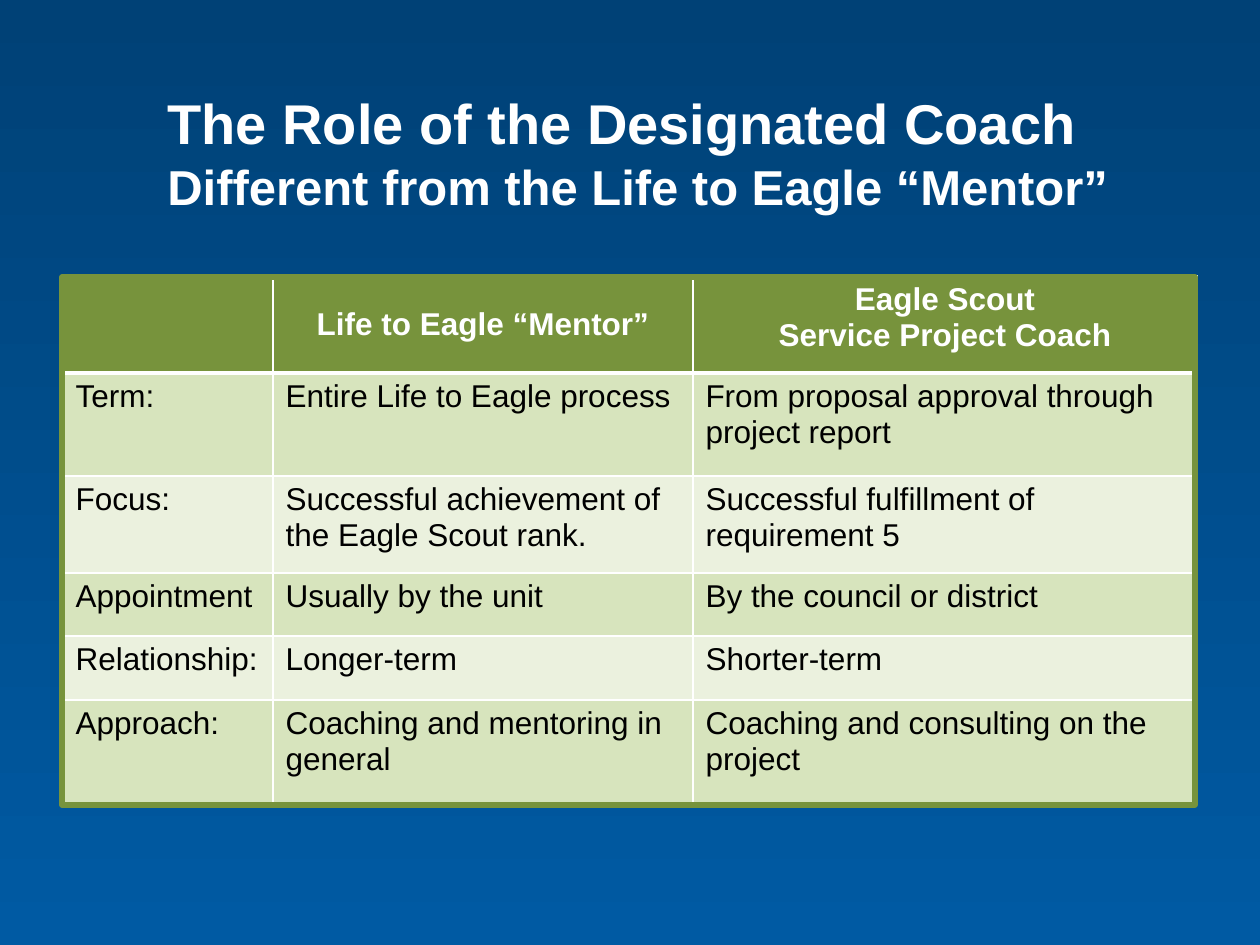
from lxml.etree import SubElement
from pptx import Presentation
from pptx.dml.color import RGBColor
from pptx.enum.shapes import MSO_SHAPE as Shape
from pptx.enum.text import MSO_ANCHOR as Anchor, PP_ALIGN as Align
from pptx.oxml.ns import qn
from pptx.util import Emu, Pt

PX = 914400 / 126
GREEN = "77933C"
WHITE = "FFFFFF"
BANDS = ["D7E4BD", "EBF1DE"]
COLUMNS = [210, 420, 504]
ROWS = [97, 103, 97, 63, 64, 103]
HEADINGS = ["", "Life to Eagle “Mentor”", "Eagle Scout\nService Project Coach"]
COMPARISON = [
    ["Term:", "Entire Life to Eagle process",
     "From proposal approval through project report"],
    ["Focus:", "Successful achievement of the Eagle Scout rank.",
     "Successful fulfillment of requirement 5"],
    ["Appointment", "Usually by the unit", "By the council or district"],
    ["Relationship:", "Longer-term", "Shorter-term"],
    ["Approach:", "Coaching and mentoring in general",
     "Coaching and consulting on the project"],
]


def px(length):
    return Emu(round(length * PX))


def color(value):
    return RGBColor.from_string(value)


def write(frame, text, sizes=(18,), ink="000000", bold=False,
          align=Align.LEFT, anchor=Anchor.TOP):
    frame.word_wrap = True
    frame.vertical_anchor = anchor
    paragraph = frame.paragraphs[0]
    paragraph.alignment = align
    for index, line in enumerate(text.split("\n")):
        if index:
            paragraph.add_line_break()
        run = paragraph.add_run()
        run.text = line
        run.font.name = "Arial"
        run.font.size = Pt(sizes[min(index, len(sizes) - 1)])
        run.font.bold = bold
        run.font.color.rgb = color(ink)


def set_borders(cell, **widths):
    properties = cell._tc.get_or_add_tcPr()
    for side in "LRTB":
        line = SubElement(properties, qn(f"a:ln{side}"), w=str(Pt(widths.get(side, 1))))
        fill = SubElement(line, qn("a:solidFill"))
        SubElement(fill, qn("a:srgbClr"), val=WHITE)


def paint_background(slide):
    fill = slide.background.fill
    fill.gradient()
    fill.gradient_angle = 270
    for stop, shade in zip(fill.gradient_stops, ["004176", "005AA3"]):
        stop.color.rgb = color(shade)


def add_title(slide, left, top, width, height):
    title = slide.shapes.add_textbox(px(left), px(top), px(width), px(height))
    write(title.text_frame, "The Role of the Designated Coach\n"
          "Different from the Life to Eagle “Mentor”",
          sizes=(32, 28), ink=WHITE, bold=True, anchor=Anchor.MIDDLE)


def add_comparison(slide, left, top):
    width, height = sum(COLUMNS), sum(ROWS)
    table = slide.shapes.add_table(len(ROWS), len(COLUMNS), px(left), px(top),
                                   px(width), px(height)).table
    table.horz_banding = False
    for column, size in zip(table.columns, COLUMNS):
        column.width = px(size)
    for row, size in zip(table.rows, ROWS):
        row.height = px(size)
    for r, texts in enumerate([HEADINGS] + COMPARISON):
        for c, text in enumerate(texts):
            cell = table.cell(r, c)
            set_borders(cell, T=3 if r == 1 else 1, B=3 if r == 0 else 1)
            cell.fill.solid()
            cell.fill.fore_color.rgb = color(BANDS[(r - 1) % 2] if r else GREEN)
            if r:
                write(cell.text_frame, text)
            elif text:
                write(cell.text_frame, text, ink=WHITE, bold=True, align=Align.CENTER)
    table.cell(0, 1).vertical_anchor = Anchor.MIDDLE

    frame = slide.shapes.add_shape(Shape.RECTANGLE, px(left - 1), px(top + 1),
                                   px(width - 1), px(height + 1))
    frame.shadow.inherit = False
    frame.fill.background()
    frame.line.color.rgb = color(GREEN)
    frame.line.width = Pt(3)


def main():
    deck = Presentation()
    deck.slide_width, deck.slide_height = px(1260), px(945)
    slide = deck.slides.add_slide(deck.slide_layouts[6])
    paint_background(slide)
    add_title(slide, 155, 29, 1187, 246)
    add_comparison(slide, 63, 276)
    deck.save("out.pptx")


if __name__ == "__main__":
    main()
